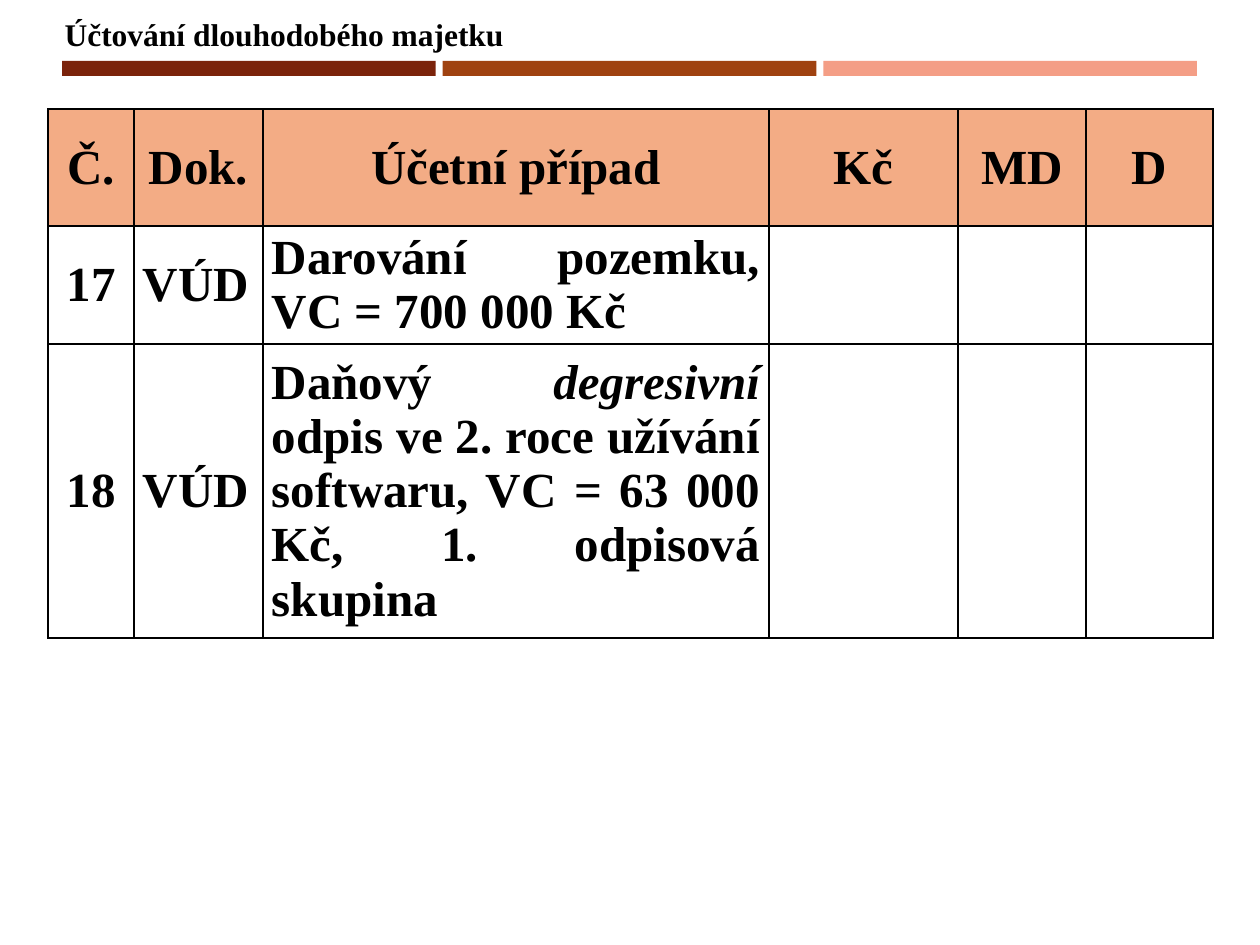
from lxml import etree
from pptx import Presentation
from pptx import util as u
from pptx.dml.color import RGBColor
from pptx.enum import shapes, text
from pptx.oxml.ns import qn

FONT = "Times New Roman"
BLACK = "000000"
HEADER_FILL = "F3AC85"
BAR_COLORS = ["7B230B", "9F4210", "F49E86"]
COLUMNS = [86, 129, 506, 189, 128, 127]
ROWS = [117, 118, 294]
CENTER, LEFT, JUSTIFY = text.PP_ALIGN.CENTER, text.PP_ALIGN.LEFT, text.PP_ALIGN.JUSTIFY
BODY_ALIGN = [CENTER, LEFT, JUSTIFY, CENTER, CENTER, CENTER]

# Each cell is a list of text pieces; a (text, True) piece is italic
HEADER = ["Č.", "Dok.", "Účetní případ", "Kč", "MD", "D"]
ENTRIES = [
    ["17", "VÚD", "Darování pozemku, VC = 700 000 Kč", "", "", ""],
    ["18", "VÚD",
     [("Daňový ", False), ("degresivní", True),
      (" odpis ve 2. roce užívání softwaru, VC = 63 000 Kč, 1. odpisová skupina", False)],
     "", "", ""],
]


def px(length):
    return u.Emu(round(length * 914400 / 126))


def color(value):
    return RGBColor.from_string(value)


def style_span(span, size, italic=False):
    span.font.name = FONT
    span.font.size = u.Pt(size)
    span.font.bold = True
    span.font.italic = italic
    span.font.color.rgb = color(BLACK)


def add_title(page, left, top, width, height):
    box = page.shapes.title
    box.left, box.top, box.width, box.height = map(px, (left, top, width, height))
    frame = box.text_frame
    frame.text = "Účtování dlouhodobého majetku"
    frame.word_wrap = False
    frame.auto_size = text.MSO_AUTO_SIZE.SHAPE_TO_FIT_TEXT
    frame.vertical_anchor = text.MSO_ANCHOR.TOP
    para = frame.paragraphs[0]
    para.alignment = LEFT
    style_span(para.runs[0], 18)


def add_bars(page, left, top, width, height, gap=7):
    bar_width = (width - gap * (len(BAR_COLORS) - 1)) / len(BAR_COLORS)
    for index, fill in enumerate(BAR_COLORS):
        bar = page.shapes.add_shape(
            shapes.MSO_SHAPE.RECTANGLE,
            px(left + index * (bar_width + gap)), px(top), px(bar_width), px(height))
        bar.shadow.inherit = False
        bar.fill.solid()
        bar.fill.fore_color.rgb = color(fill)
        bar.line.fill.background()


def set_borders(cell):
    properties = cell._tc.get_or_add_tcPr()
    for position, side in enumerate(["a:lnL", "a:lnR", "a:lnT", "a:lnB"]):
        line = etree.Element(qn(side), w=str(u.Pt(1)))
        fill = etree.SubElement(line, qn("a:solidFill"))
        etree.SubElement(fill, qn("a:srgbClr"), val=BLACK)
        properties.insert(position, line)


def fill_cell(cell, content, alignment, fill=None):
    cell.vertical_anchor = text.MSO_ANCHOR.MIDDLE
    cell.margin_left = cell.margin_right = px(9)
    cell.margin_top = cell.margin_bottom = 0
    if fill:
        cell.fill.solid()
        cell.fill.fore_color.rgb = color(fill)
    else:
        cell.fill.background()
    set_borders(cell)
    para = cell.text_frame.paragraphs[0]
    para.alignment = alignment
    pieces = [(content, False)] if isinstance(content, str) else content
    for words, italic in pieces:
        if words:
            span = para.add_run()
            span.text = words
            style_span(span, 28, italic)


def add_entries_table(page, left, top):
    table = page.shapes.add_table(
        len(ROWS), len(COLUMNS), px(left), px(top), px(sum(COLUMNS)), px(sum(ROWS))).table
    table.horz_banding = False
    for column, width in zip(table.columns, COLUMNS):
        column.width = px(width)
    for row, height in zip(table.rows, ROWS):
        row.height = px(height)
    for row_index, contents in enumerate([HEADER] + ENTRIES):
        for column_index, content in enumerate(contents):
            is_header = row_index == 0
            fill_cell(table.cell(row_index, column_index), content,
                      CENTER if is_header else BODY_ALIGN[column_index],
                      HEADER_FILL if is_header else None)


def main():
    deck = Presentation()
    deck.slide_width, deck.slide_height = px(1260), px(945)
    page = deck.slides.add_slide(deck.slide_layouts[5])
    add_bars(page, 62, 61, 1135, 15)
    add_title(page, 52, 9, 469, 50)
    add_entries_table(page, 48, 109)
    deck.save("out.pptx")


if __name__ == "__main__":
    main()
